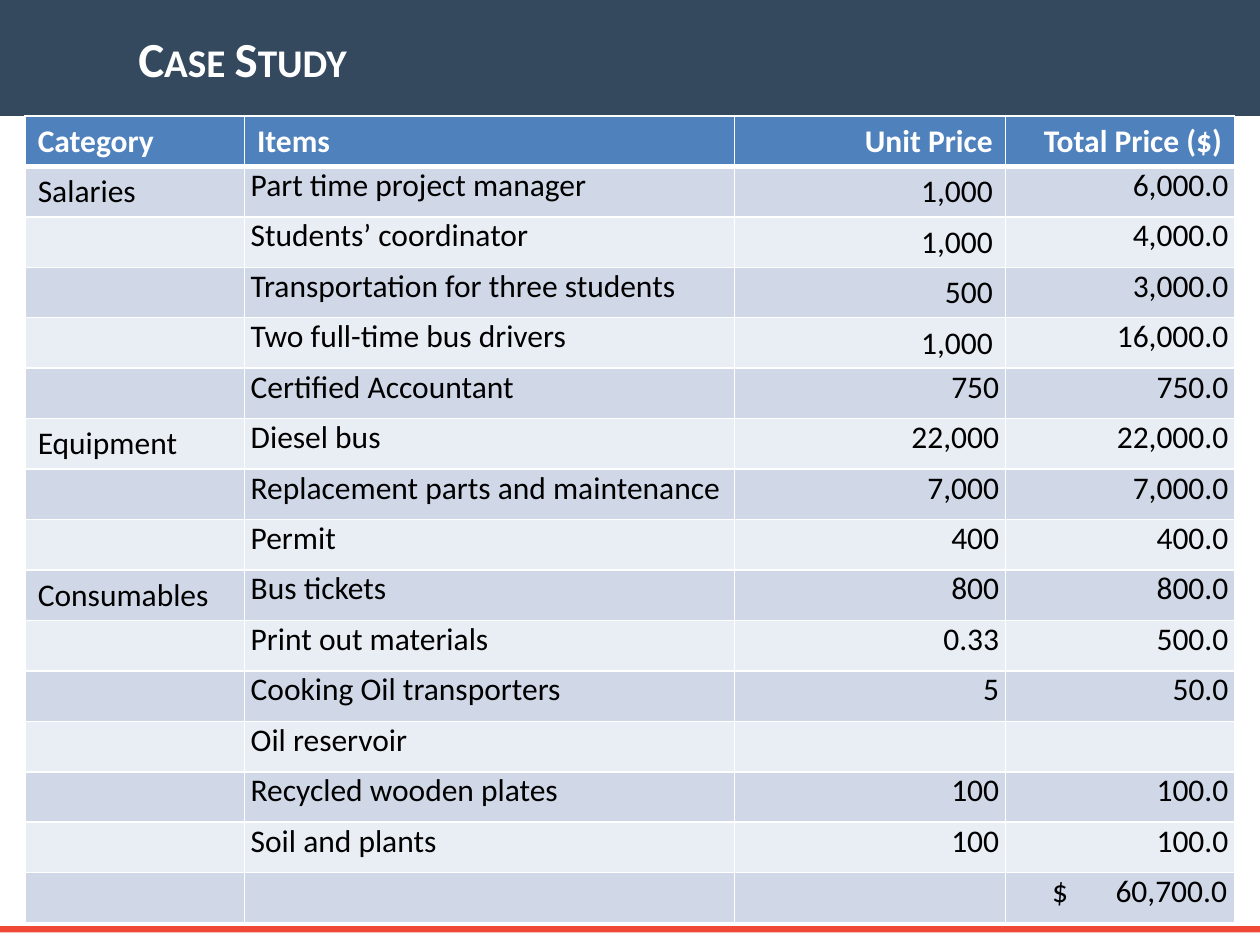
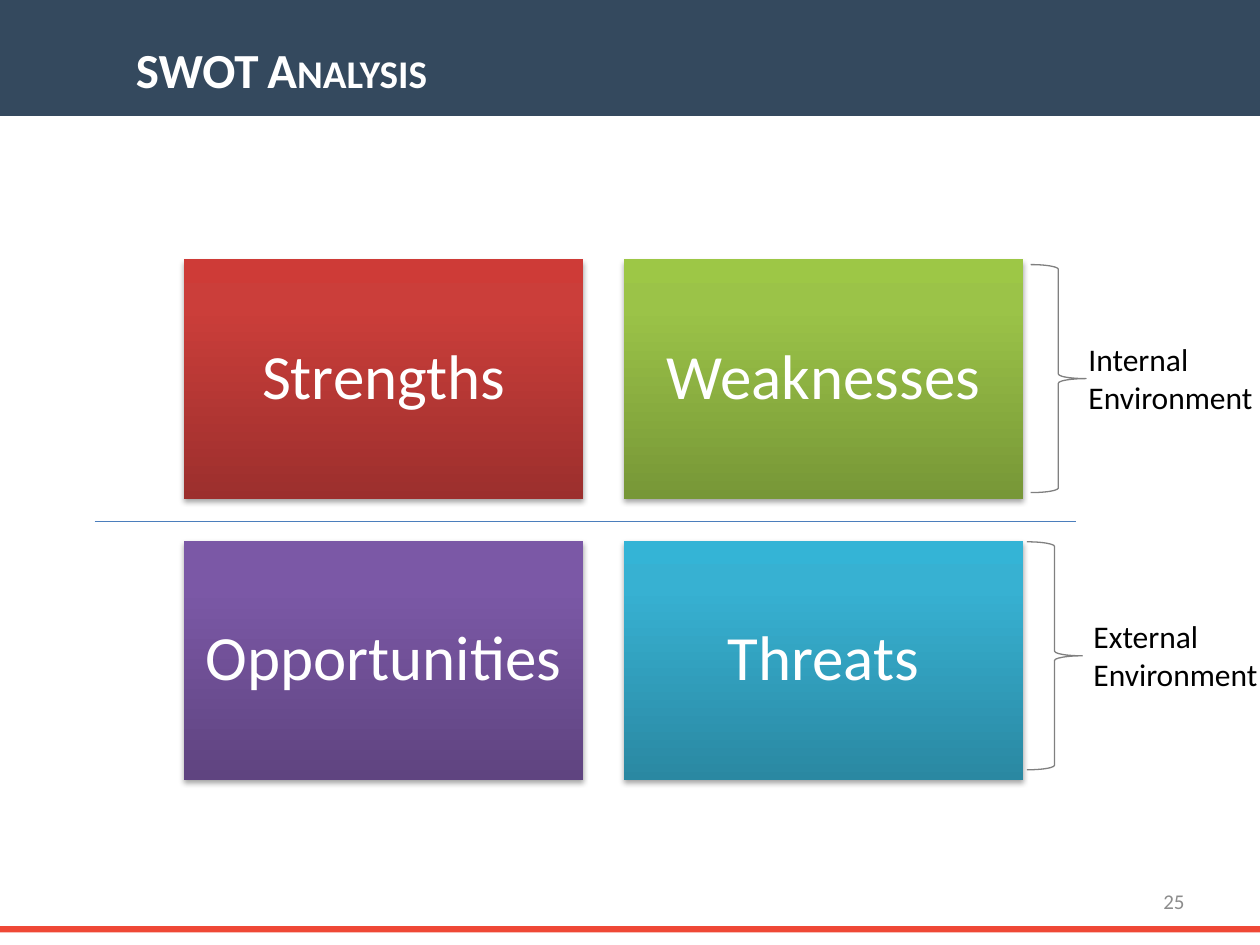
"""Build the case study budget table and the SWOT analysis slides."""
from dataclasses import dataclass
from typing import NamedTuple

from lxml import etree
from pptx import Presentation
from pptx import util as u
from pptx.dml.color import RGBColor
from pptx.enum import shapes, text
from pptx.oxml import parse_xml
from pptx.oxml.ns import nsdecls, qn

EMU_PER_PX = 9144
FONT = "Calibri"
WHITE, BLACK = "FFFFFF", "000000"
BAND, FOOTER, PAGE_GREY = "34495E", "EF4836", "8C8C8C"
HEADER, STRIPES = "4F81BD", ("D0D8E8", "E9EDF4")
DIVIDER, BRACE = "4B7EBC", "808080"
LEFT, CENTER, RIGHT = text.PP_ALIGN.LEFT, text.PP_ALIGN.CENTER, text.PP_ALIGN.RIGHT
TOP, MIDDLE = text.MSO_ANCHOR.TOP, text.MSO_ANCHOR.MIDDLE
PADDED, TIGHT, TOTAL_PAD = (10, 5, 10, 5), (5, 0, 5, 0), (37, 0, 5, 0)
TOTAL_TAB = 139
COLUMN_WIDTHS = (174, 389, 215, 182)
COLUMN_ALIGNS = (LEFT, LEFT, RIGHT, RIGHT)
ROW_HEIGHT = 40


class Box(NamedTuple):
    left: int
    top: int
    width: int
    height: int


@dataclass(frozen=True)
class Cost:
    category: str
    item: str
    unit: str
    total: str
    unit_pad: tuple = TIGHT


@dataclass(frozen=True)
class Quadrant:
    label: str
    column: int
    row: int
    gradient: tuple


@dataclass(frozen=True)
class Environment:
    label: str
    label_box: Box
    brace_box: Box


HEADINGS = ("Category", "Items", "Unit Price", "Total Price ($)")
COSTS = (
    Cost("Salaries", "Part time project manager", "1,000", "6,000.0", PADDED),
    Cost("", "Students’ coordinator", "1,000", "4,000.0", PADDED),
    Cost("", "Transportation for three students", "500", "3,000.0", PADDED),
    Cost("", "Two full-time bus drivers", "1,000", "16,000.0", PADDED),
    Cost("", "Certified Accountant", "750", "750.0"),
    Cost("Equipment", "Diesel bus", "22,000", "22,000.0"),
    Cost("", "Replacement parts and maintenance", "7,000", "7,000.0"),
    Cost("", "Permit", "400", "400.0"),
    Cost("Consumables", "Bus tickets", "800", "800.0"),
    Cost("", "Print out materials", "0.33", "500.0"),
    Cost("", "Cooking Oil transporters", "5", "50.0"),
    Cost("", "Oil reservoir", "", ""),
    Cost("", "Recycled wooden plates", "100", "100.0"),
    Cost("", "Soil and plants", "100", "100.0"),
    Cost("", "", "", "$\t60,700.0"),
)
QUADRANTS = (
    Quadrant("Strengths", 0, 0, ("9C2F2D", "CB3E3A", "CE3B37")),
    Quadrant("Weaknesses", 1, 0, ("779737", "9BC348", "9DC746")),
    Quadrant("Opportunities", 0, 1, ("5F4480", "7B58A6", "7C57A8")),
    Quadrant("Threats", 1, 1, ("2A88A2", "37B1D2", "34B4D6")),
)
ENVIRONMENTS = (
    Environment("Internal Environment", Box(854, 265, 161, 71), Box(818, 210, 44, 181)),
    Environment("External\nEnvironment", Box(858, 485, 161, 71), Box(815, 430, 44, 181)),
)


def px(length: int) -> u.Emu:
    return u.Emu(length * EMU_PER_PX)


def rgb(value: str) -> RGBColor:
    return RGBColor.from_string(value)


def write(frame, content: str, *, size: int = 18, color: str = BLACK, bold: bool = False,
          small_caps: bool = False, align=LEFT, spacing: float = 1.0) -> None:
    for index, line in enumerate(content.split("\n")):
        paragraph = frame.paragraphs[0] if index == 0 else frame.add_paragraph()
        paragraph.alignment = align
        paragraph.line_spacing = spacing
        run = paragraph.add_run()
        run.text = line
        run.font.name, run.font.size, run.font.bold = FONT, u.Pt(size), bold
        run.font.color.rgb = rgb(color)
        if small_caps:
            run.font._element.set("cap", "small")


def pad(holder, insets: tuple) -> None:
    holder.margin_left, holder.margin_top, holder.margin_right, holder.margin_bottom = map(px, insets)


def add_label(slide, box: Box, content: str, anchor=MIDDLE, **style) -> None:
    frame = slide.shapes.add_textbox(*map(px, box)).text_frame
    frame.word_wrap = True
    frame.vertical_anchor = anchor
    pad(frame, PADDED)
    write(frame, content, **style)


def add_outline(slide, kind, box: Box, fill: str = "", line: str = ""):
    shape = slide.shapes.add_shape(kind, *map(px, box))
    shape.shadow.inherit = False
    if fill:
        shape.fill.solid()
        shape.fill.fore_color.rgb = rgb(fill)
    else:
        shape.fill.background()
    if line:
        shape.line.color.rgb = rgb(line)
        shape.line.width = u.Pt(0.75)
    else:
        shape.line.fill.background()
    return shape


def add_slide(deck, title: str, title_box: Box):
    slide = deck.slides.add_slide(deck.slide_layouts[6])
    for box, color in ((Box(0, 735, 1000, 5), FOOTER), (Box(0, 0, 1000, 92), BAND)):
        add_outline(slide, shapes.MSO_SHAPE.RECTANGLE, box, fill=color)
    add_label(slide, title_box, title, size=28, color=WHITE, bold=True, small_caps=True)
    return slide


def set_borders(cell, top: int = 1, bottom: int = 1) -> None:
    widths = {"lnL": 1, "lnR": 1, "lnT": top, "lnB": bottom}
    for position, (side, points) in enumerate(widths.items()):
        cell._tc.get_or_add_tcPr().insert(position, parse_xml(
            f'<a:{side} {nsdecls("a")} w="{u.Pt(points)}"><a:solidFill>'
            f'<a:srgbClr val="{WHITE}"/></a:solidFill></a:{side}>'))


def fill_cell(cell, content: str, fill: str, insets: tuple, **style) -> None:
    cell.fill.solid()
    cell.fill.fore_color.rgb = rgb(fill)
    pad(cell, insets)
    if content:
        write(cell.text_frame, content, **style)


def add_total_tab(cell) -> None:
    properties = cell.text_frame.paragraphs[0]._p.get_or_add_pPr()
    tabs = etree.SubElement(properties, qn("a:tabLst"))
    etree.SubElement(tabs, qn("a:tab"), pos=str(px(TOTAL_TAB)), algn="r")


def add_cost_table(slide) -> None:
    rows = len(COSTS) + 1
    table = slide.shapes.add_table(rows, len(HEADINGS), px(20), px(92),
                                   px(sum(COLUMN_WIDTHS)), px(rows * ROW_HEIGHT)).table
    for column, width in zip(table.columns, COLUMN_WIDTHS):
        column.width = px(width)
    for column, (heading, align) in enumerate(zip(HEADINGS, COLUMN_ALIGNS)):
        cell = table.cell(0, column)
        fill_cell(cell, heading, HEADER, PADDED, color=WHITE, bold=True, align=align)
        set_borders(cell, bottom=3)
    for row, cost in enumerate(COSTS, start=1):
        values = (cost.category, cost.item, cost.unit, cost.total)
        pads = (PADDED, TIGHT, cost.unit_pad, TIGHT)
        for column, (value, insets, align) in enumerate(zip(values, pads, COLUMN_ALIGNS)):
            cell = table.cell(row, column)
            has_tab = "\t" in value
            fill_cell(cell, value, STRIPES[(row - 1) % 2],
                      TOTAL_PAD if has_tab else insets if value else PADDED,
                      align=LEFT if has_tab else align)
            if has_tab:
                add_total_tab(cell)
            set_borders(cell, top=3 if row == 1 else 1)


def add_quadrant(slide, quadrant: Quadrant) -> None:
    box = Box(146 + quadrant.column * 349, 206 + quadrant.row * 223, 317, 190)
    tile = add_outline(slide, shapes.MSO_SHAPE.RECTANGLE, box)
    stops = "".join(f'<a:gs pos="{percent * 1000}"><a:srgbClr val="{color}"/></a:gs>'
                    for percent, color in zip((0, 80, 100), quadrant.gradient))
    properties = tile._element.spPr
    properties.replace(properties.find(qn("a:noFill")), parse_xml(
        f'<a:gradFill {nsdecls("a")} rotWithShape="1"><a:gsLst>{stops}</a:gsLst>'
        '<a:lin ang="16200000" scaled="0"/></a:gradFill>'))
    properties.find(qn("a:effectLst")).append(parse_xml(
        f'<a:outerShdw {nsdecls("a")} blurRad="{u.Pt(3.1)}" dist="{u.Pt(1.8)}" dir="5400000" '
        f'rotWithShape="0"><a:srgbClr val="{BLACK}"><a:alpha val="35000"/></a:srgbClr></a:outerShdw>'))
    frame = tile.text_frame
    frame.word_wrap = True
    frame.vertical_anchor = MIDDLE
    pad(frame, (15, 15, 15, 15))
    write(frame, quadrant.label, size=36, color=WHITE, align=CENTER, spacing=0.9)


def add_divider(slide) -> None:
    divider = slide.shapes.add_connector(shapes.MSO_CONNECTOR.STRAIGHT,
                                         px(75), px(414), px(854), px(414))
    divider.line.color.rgb = rgb(DIVIDER)
    divider.line.width = u.Pt(0.75)
    etree.SubElement(divider._element.spPr, qn("a:effectLst"))


def main() -> None:
    deck = Presentation()
    deck.slide_width, deck.slide_height = px(1000), px(750)

    case_study = add_slide(deck, "Case Study", Box(100, 0, 900, 92))
    add_cost_table(case_study)

    swot = add_slide(deck, "SWOT Analysis", Box(98, 26, 449, 57))
    add_label(swot, Box(717, 695, 233, 40), "25", size=12, color=PAGE_GREY, align=RIGHT)
    for quadrant in QUADRANTS:
        add_quadrant(swot, quadrant)
    add_divider(swot)
    for environment in ENVIRONMENTS:
        add_label(swot, environment.label_box, environment.label, anchor=TOP)
        add_outline(swot, shapes.MSO_SHAPE.RIGHT_BRACE, environment.brace_box, line=BRACE)

    deck.save("out.pptx")


if __name__ == "__main__":
    main()
